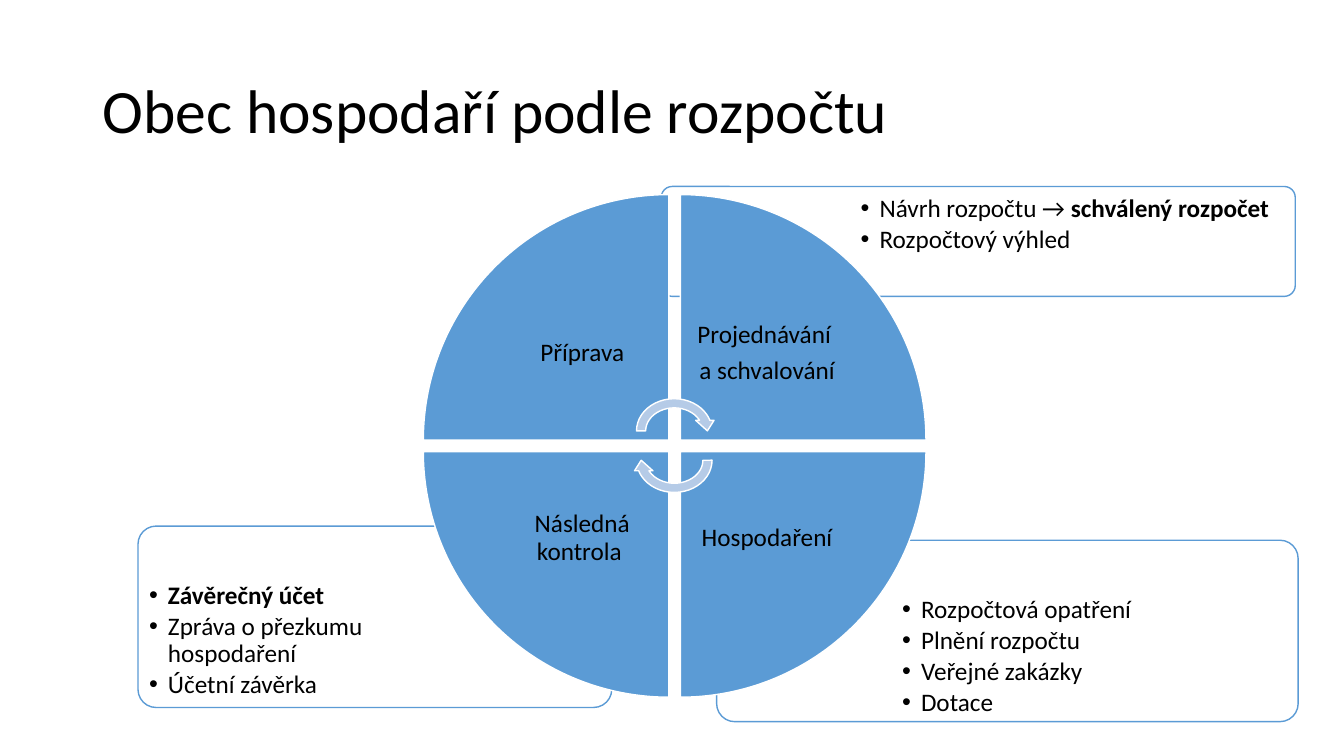
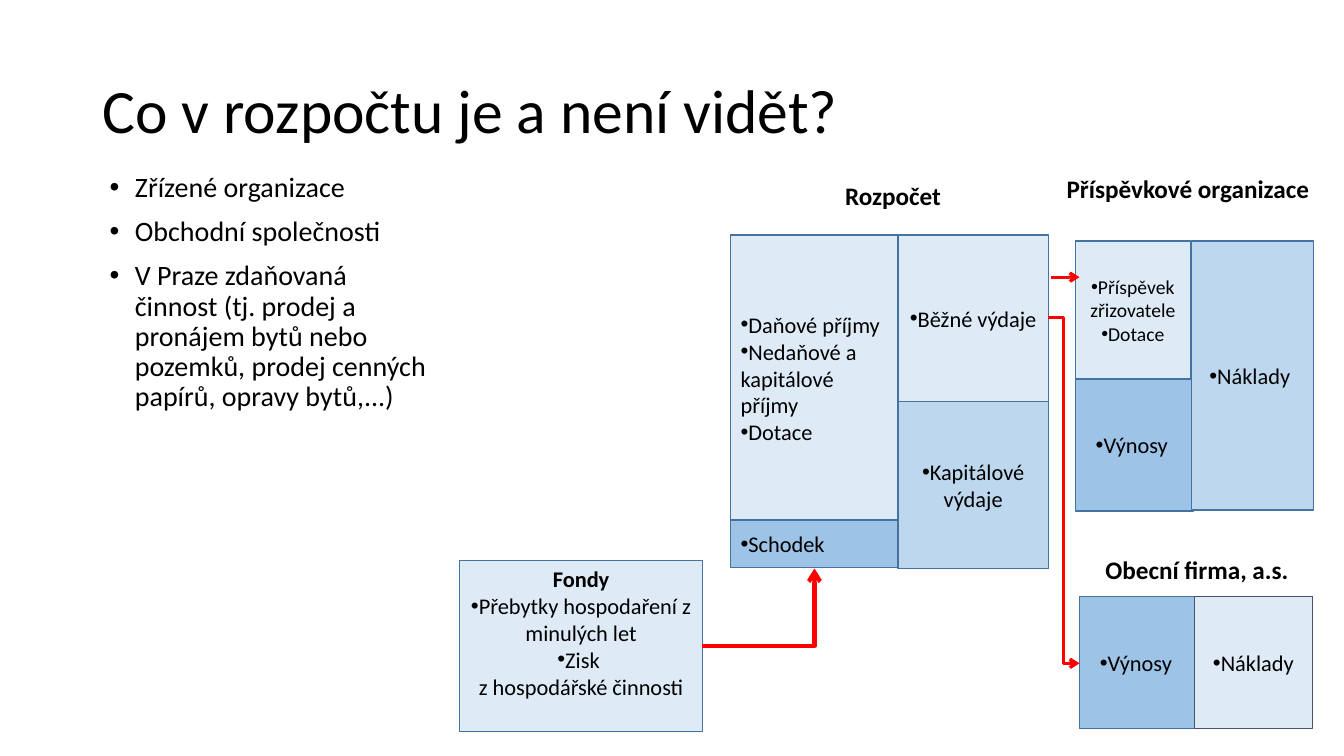
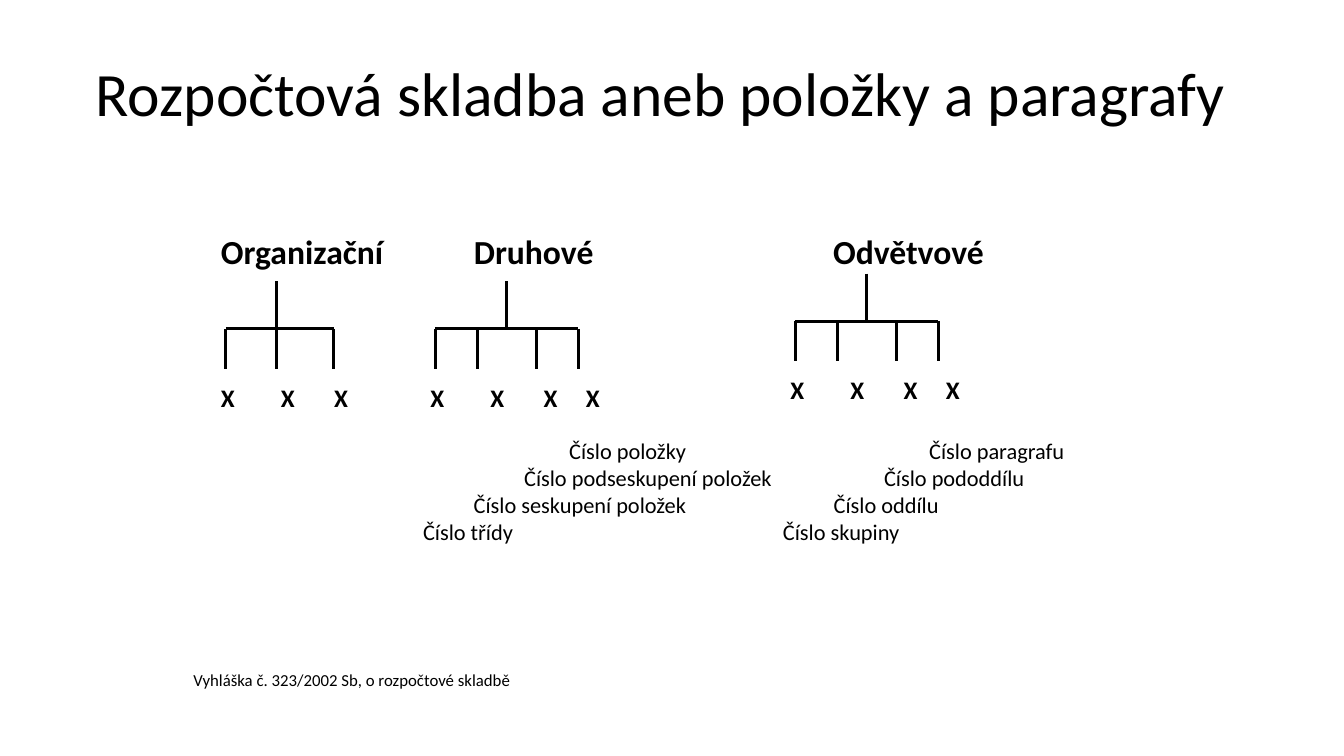
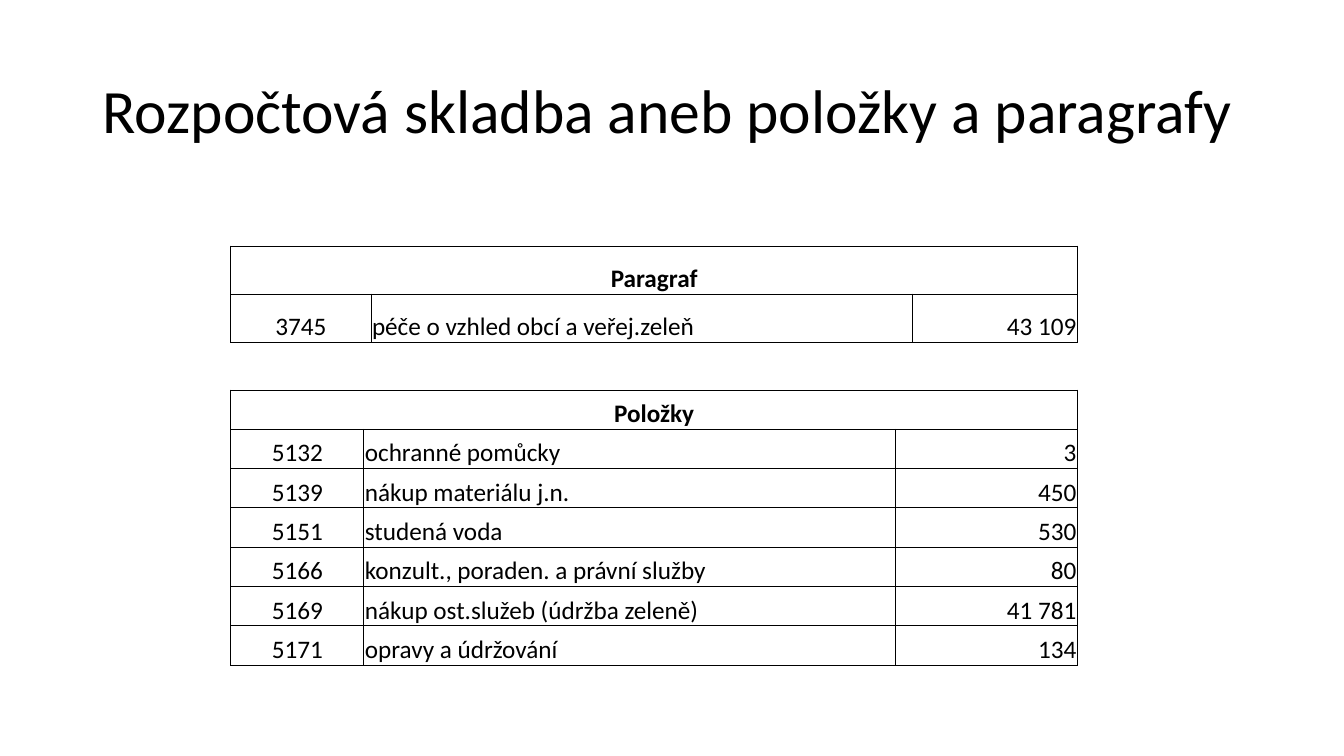
"""Builds four slides on how a municipality runs its budget."""
import lxml.etree
import pptx
import pptx.dml.color
import pptx.enum.shapes
import pptx.enum.text
import pptx.oxml.ns
import pptx.util

Pt = pptx.util.Pt
qn = pptx.oxml.ns.qn
SHAPE = pptx.enum.shapes.MSO_SHAPE
CONNECTOR = pptx.enum.shapes.MSO_CONNECTOR
ALIGN = {"left": pptx.enum.text.PP_ALIGN.LEFT, "center": pptx.enum.text.PP_ALIGN.CENTER,
         "right": pptx.enum.text.PP_ALIGN.RIGHT}
ANCHOR = {"top": pptx.enum.text.MSO_ANCHOR.TOP, "middle": pptx.enum.text.MSO_ANCHOR.MIDDLE,
          "bottom": pptx.enum.text.MSO_ANCHOR.BOTTOM}

FONT = "Calibri"
COLORS = {"text": "000000", "white": "FFFFFF", "blue": "5B9BD5", "arrow": "B5CBE7",
          "pale": "DEEBF7", "light": "BDD7EE", "medium": "9DC3E6",
          "edge": "43739E", "slate": "44546A", "red": "FF0000"}
INSETS = (7.2, 3.6, 7.2, 3.6)

CYCLE_TITLE = "Obec hospodaří podle rozpočtu"
CARDS = [
    ((98.6, 375.8, 338.4, 129.6), (101.5, 411.1, 231.1, 91.4),
     ["•*Závěrečný účet*", "•Zpráva o přezkumu hospodaření", "•Účetní závěrka"]),
    ((511.9, 385.9, 415.4, 129.6), (639.4, 421.2, 285.1, 91.4),
     ["•Rozpočtová opatření", "•Plnění rozpočtu", "•Veřejné zakázky", "•Dotace"]),
    ((472.3, 133.2, 452.9, 78.5), (609.8, 134.6, 313.9, 55.4),
     ["•Návrh rozpočtu → *schválený rozpočet*", "•Rozpočtový výhled"]),
]
PHASES = [
    (0, 0, ["Příprava"]),
    (1, 0, ["Projednávání ", "a schvalování"]),
    (1, 1, ["Hospodaření"]),
    (0, 1, ["Následná kontrola "]),
]
WHEEL = {"left": 302.4, "top": 139, "wedge": 175.4, "step": 183.6, "label": 123.8}
CYCLE_ARROWS = [(281.5, 0), (302.4, 180)]

FLOW_TITLE = "Co v rozpočtu je a není vidět?"
FLOW_POINTS = [
    "•Zřízené organizace",
    "•Obchodní společnosti",
    "•V Praze zdaňovaná činnost (tj. prodej a pronájem bytů nebo pozemků, "
    "prodej cenných papírů, opravy bytů,...)",
]
FLOW_BOXES = [
    ((522, 167.8, 119.5, 204.5), "pale", "edge", 16, "left",
     ["•Daňové příjmy", "•Nedaňové a kapitálové příjmy", "•Dotace"]),
    ((522, 371.5, 119.5, 33.8), "medium", "edge", 16, "left", ["•Schodek"]),
    ((641.5, 167.8, 107.3, 118.8), "pale", "edge", 16, "center", ["•Běžné výdaje"]),
    ((641.5, 286.6, 107.3, 119.5), "light", "edge", 16, "center", ["•Kapitálové výdaje"]),
    ((768.2, 172.1, 82.1, 98.6), "pale", "edge", 14, "center",
     ["•Příspěvek zřizovatele", "•Dotace"]),
    ((768.2, 270.7, 84.2, 94.3), "medium", "edge", 16, "center", ["•Výnosy "]),
    ((851, 172.1, 87.1, 192.2), "light", "edge", 16, "center", ["•Náklady "]),
    ((771.1, 426.2, 84.2, 94.3), "medium", "edge", 16, "center", ["•Výnosy "]),
    ((853.2, 426.2, 84.2, 94.3), "pale", "slate", 16, "center", ["•Náklady"]),
]
FUNDS_BOX = (328.3, 400.3, 173.5, 122.4)
FUNDS = ["*Fondy*", "•Přebytky hospodaření z minulých let", "•Zisk ", "z hospodářské činnosti"]
FLOW_HEADINGS = [(637.9, 125.3, "Rozpočet"), (848.5, 120.2, "Příspěvkové organizace"),
                 (855, 392.4, "Obecní firma, a.s.")]
FLOW_ARROWS = [
    ((501.8, 461.5, 581.8, 406.1), 3, "bentConnector2"),
    ((751, 198, 771.1, 198), 2.25, "line"),
    ((748.8, 226.8, 771.1, 473.8), 2.25, "bentConnector3"),
]

CODES_TITLE = "Rozpočtová skladba aneb položky a paragrafy"
BRANCHES = [0, 30.2, 72, 102.2]
MARKS = [0, 42.8, 80.8, 111]
TREES = [
    {"heading": "Organizační", "heading_left": 150.7, "left": 161.3, "rise": 0,
     "stem": 36, "branches": [0, 36, 77], "marks": MARKS[:3], "captions": []},
    {"heading": "Druhové", "heading_left": 331.4, "left": 311, "rise": 0,
     "stem": 51.1, "branches": BRANCHES, "marks": MARKS,
     "captions": ["Číslo položky", "Číslo podseskupení položek",
                  "Číslo seskupení položek", "Číslo třídy"]},
    {"heading": "Odvětvové", "heading_left": 588, "left": 568.1, "rise": 5.4,
     "stem": 51.1, "branches": BRANCHES, "marks": MARKS,
     "captions": ["Číslo paragrafu", "Číslo pododdílu", "Číslo oddílu", "Číslo skupiny"]},
]
CAPTION_MARGINS = [104.4, 72.2, 36.2, 0]
SOURCE_NOTE = "Vyhláška č. 323/2002 Sb, o rozpočtové skladbě"

TABLES = [
    {"top": 278.6, "row": 28.08, "columns": [95, 379.5, 130.3], "heading": "Položky",
     "rows": [("5132", "ochranné pomůcky", "3"),
              ("5139", "nákup materiálu j.n.", "450"),
              ("5151", "studená voda", "530"),
              ("5166", "konzult., poraden. a právní služby", "80"),
              ("5169", "nákup ost.služeb (údržba zeleně)", "41 781"),
              ("5171", "opravy a údržování", "134")]},
    {"top": 175.7, "row": 34.4, "columns": [100.1, 386.6, 118.1], "heading": "Paragraf",
     "rows": [("3745", "péče o vzhled obcí a veřej.zeleň", "43 109")]},
]
TABLE_LEFT = 164.9


def color(name):
    return pptx.dml.color.RGBColor.from_string(COLORS[name])


def points(values):
    return [Pt(value) for value in values]


def write(frame, lines, size=18, align="left", anchor="top", insets=INSETS, spacing=None,
          before=0, after=0, indent=0, margins=None, wrap=True):
    """Fill a frame; a leading bullet sign makes a bullet, stars enclose bold words."""
    frame.word_wrap = wrap
    frame.vertical_anchor = ANCHOR[anchor]
    (frame.margin_left, frame.margin_top,
     frame.margin_right, frame.margin_bottom) = points(insets)
    for index, line in enumerate(lines):
        para = frame.add_paragraph() if index else frame.paragraphs[0]
        para.alignment = ALIGN[align]
        para.line_spacing = spacing
        para.space_before, para.space_after = Pt(before), Pt(after)
        properties = para._p.get_or_add_pPr()
        if line.startswith("•"):
            properties.set("marL", str(Pt(indent)))
            properties.set("indent", str(-Pt(indent)))
            lxml.etree.SubElement(properties, qn("a:buFont")).set("typeface", "Arial")
            lxml.etree.SubElement(properties, qn("a:buChar")).set("char", "•")
        elif margins:
            properties.set("marL", str(Pt(margins[index])))
        for position, piece in enumerate(line.removeprefix("•").split("*")):
            if piece:
                span = para.add_run()
                span.text = piece
                span.font.name = FONT
                span.font.size = Pt(size)
                span.font.bold = position % 2 == 1
                span.font.color.rgb = color("text")


def add_text(page, area, lines, **style):
    write(page.shapes.add_textbox(*points(area)).text_frame, lines, **style)


def add_block(page, kind, area, fill, line, rotation=0):
    block = page.shapes.add_shape(kind, *points(area))
    block.shadow.inherit = False
    block.rotation = rotation
    block.fill.solid()
    block.fill.fore_color.rgb = color(fill)
    block.line.color.rgb = color(line)
    block.line.width = Pt(1)
    return block


def add_line(page, ends, width, tint="text", geometry="line", arrow=False):
    kind = CONNECTOR.STRAIGHT if geometry == "line" else CONNECTOR.ELBOW
    line = page.shapes.add_connector(kind, *points(ends))
    line.line.color.rgb = color(tint)
    line.line.width = Pt(width)
    properties = line._element.spPr
    properties.prstGeom.set("prst", geometry)
    if arrow:
        lxml.etree.SubElement(properties.find(qn("a:ln")), qn("a:tailEnd")).set("type", "arrow")
    lxml.etree.SubElement(properties, qn("a:effectLst"))


def add_page(deck, title, left=66.2, top=28.8):
    page = deck.slides.add_slide(deck.slide_layouts[6])
    add_text(page, (left, top, 828, 104.4), [title], size=44, anchor="middle", spacing=0.9)
    return page


def build_cycle(deck):
    page = add_page(deck, CYCLE_TITLE)
    for card_area, text_area, lines in CARDS:
        card = add_block(page, SHAPE.ROUNDED_RECTANGLE, card_area, "white", "blue")
        card.adjustments[0] = 0.1
        tint = card._element.spPr.find(qn("a:solidFill"))[0]
        lxml.etree.SubElement(tint, qn("a:alpha")).set("val", "90000")
        add_text(page, text_area, lines, insets=[5] * 4, spacing=0.9, after=2.7, indent=13.5)
    wedge, label = WHEEL["wedge"], WHEEL["label"]
    for turn, (column, row, lines) in enumerate(PHASES):
        left = WHEEL["left"] + column * WHEEL["step"]
        top = WHEEL["top"] + row * WHEEL["step"]
        add_block(page, SHAPE.PIE_WEDGE, (left, top, wedge, wedge), "blue", "white", turn * 90)
        area = (left + (1 - column) * (wedge - label), top + (1 - row) * (wedge - label),
                label, label)
        add_text(page, area, lines, align="center", anchor="middle", insets=[10] * 4,
                 spacing=0.9, after=6.3)
    for top, rotation in CYCLE_ARROWS:
        add_block(page, SHAPE.CIRCULAR_ARROW, (451.4, top, 60.5, 52.6), "arrow", "white", rotation)


def build_flow(deck):
    page = add_page(deck, FLOW_TITLE)
    add_text(page, (71.3, 120.2, 240.5, 342.7), FLOW_POINTS, size=20, spacing=0.9,
             before=10, indent=18)
    for area, fill, line, size, align, lines in FLOW_BOXES:
        block = add_block(page, SHAPE.RECTANGLE, area, fill, line)
        write(block.text_frame, lines, size=size, align=align, anchor="middle")
    funds = add_block(page, SHAPE.RECTANGLE, FUNDS_BOX, "pale", "edge")
    write(funds.text_frame, FUNDS, size=16, align="center", anchor="middle",
          insets=(7.2, 3.6, 7.2, 23.1))
    for center, top, heading in FLOW_HEADINGS:
        add_text(page, (center - 95, top, 190, 29), [f"*{heading}*"], align="center", wrap=False)
    for ends, width, geometry in FLOW_ARROWS:
        add_line(page, ends, width, "red", geometry, arrow=True)


def build_codes(deck):
    page = add_page(deck, CODES_TITLE, 61.2, 16.8)
    for tree in TREES:
        left, branches = tree["left"], tree["branches"]
        bar = 234.9 - tree["rise"]
        stem = left + tree["stem"]
        add_text(page, (tree["heading_left"], 161.3, 160, 36), [f"*{tree['heading']}*"], size=24)
        add_line(page, (stem, bar - 34, stem, bar), 2.25)
        add_line(page, (left, bar, left + branches[-1], bar), 2.25)
        for offset in branches:
            add_line(page, (left + offset, bar, left + offset, bar + 28.5), 2.25)
        for offset in tree["marks"]:
            add_text(page, (left + offset - 13.5, bar + 34.4, 30, 29), ["*X*"], align="center")
        if tree["captions"]:
            add_text(page, (left - 15.9, 308.9, 300, 85), tree["captions"], size=16,
                     margins=CAPTION_MARGINS)
    add_text(page, (131, 474.7, 668.2, 22), [SOURCE_NOTE], size=12)


def add_ledger(page, ledger):
    rows = [(f"*{ledger['heading']}*", "", "")] + ledger["rows"]
    widths = ledger["columns"]
    area = (TABLE_LEFT, ledger["top"], sum(widths), ledger["row"] * len(rows))
    table = page.shapes.add_table(len(rows), len(widths), *points(area)).table
    table.first_row = table.horz_banding = False
    for column, width in zip(table.columns, widths):
        column.width = Pt(width)
    for row_index, row in enumerate(rows):
        table.rows[row_index].height = Pt(ledger["row"])
        for column_index, text in enumerate(row):
            cell = table.cell(row_index, column_index)
            write(cell.text_frame, [text], align=("center", "left", "right")[column_index])
            cell.vertical_anchor = ANCHOR["bottom"]
            cell.margin_left = cell.margin_right = cell.margin_top = Pt(0.75)
            cell.margin_bottom = Pt(0)
            properties = cell._tc.get_or_add_tcPr()
            for side in ("a:lnL", "a:lnR", "a:lnT", "a:lnB"):
                border = lxml.etree.SubElement(properties, qn(side), w=str(Pt(0.75)))
                fill = lxml.etree.SubElement(border, qn("a:solidFill"))
                lxml.etree.SubElement(fill, qn("a:srgbClr")).set("val", COLORS["text"])
            cell.fill.background()
    table.cell(0, 0).merge(table.cell(0, len(widths) - 1))


def build_ledgers(deck):
    page = add_page(deck, CODES_TITLE)
    for ledger in TABLES:
        add_ledger(page, ledger)


def main():
    deck = pptx.Presentation()
    deck.slide_width, deck.slide_height = Pt(960), Pt(540)
    for build in (build_cycle, build_flow, build_codes, build_ledgers):
        build(deck)
    deck.save("out.pptx")


if __name__ == "__main__":
    main()
